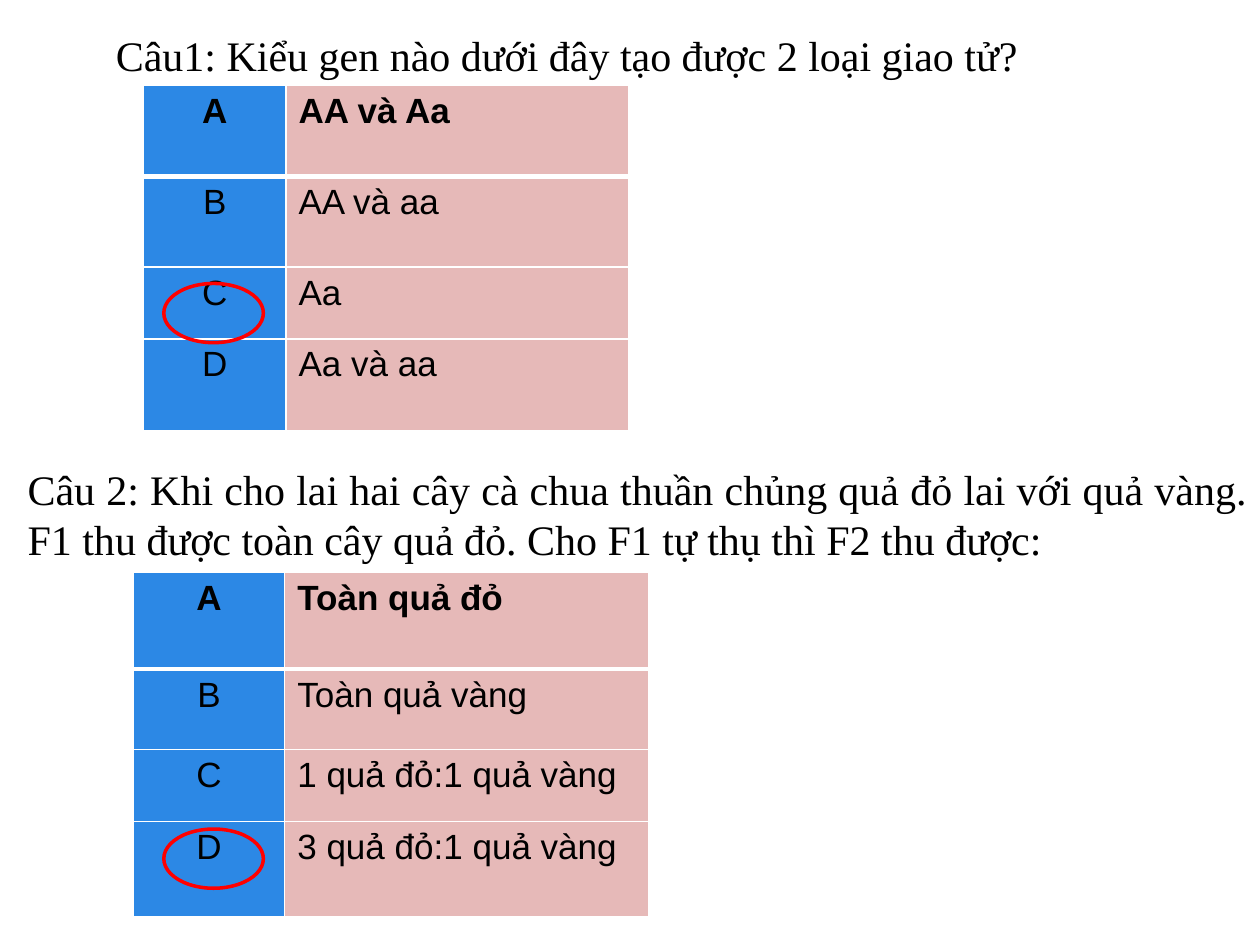
"""Build a quiz slide with two questions, their answer tables and circled answers."""
import pptx
import pptx.dml.color
import pptx.enum.shapes
import pptx.enum.text
import pptx.oxml.ns
import pptx.util
from lxml import etree

Inches = pptx.util.Inches
Pt = pptx.util.Pt
ALIGN = pptx.enum.text.PP_ALIGN
ANCHOR = pptx.enum.text.MSO_ANCHOR
COLORS = {"text": "000000", "letter": "2C88E5", "answer": "E6B9B8",
          "border": "FFFFFF", "circle": "FF0000"}


def rgb(name):
    return pptx.dml.color.RGBColor.from_string(COLORS[name])


def write(tf, text, size=20, font="Arial", bold=False, align=ALIGN.LEFT):
    p = tf.paragraphs[0]
    p.alignment = align
    r = p.add_run()
    r.text = text
    r.font.size = Pt(size)
    r.font.name = font
    r.font.bold = bold
    r.font.color.rgb = rgb("text")


def add_question(s, text, left, top, width, height, align, anchor):
    tf = s.shapes.add_textbox(Inches(left), Inches(top), Inches(width), Inches(height)).text_frame
    tf.word_wrap = True
    tf.vertical_anchor = anchor
    write(tf, text, size=24, font="Times New Roman", align=align)


def add_borders(cell, **widths):
    qn = pptx.oxml.ns.qn
    tc_pr = cell._tc.get_or_add_tcPr()
    for side in "LRTB":
        ln = etree.SubElement(tc_pr, qn(f"a:ln{side}"), w=str(Pt(widths.get(side, 1))))
        fill = etree.SubElement(ln, qn("a:solidFill"))
        etree.SubElement(fill, qn("a:srgbClr"), val=COLORS["border"])


def add_answers(s, answers, left, top, widths, heights):
    table = s.shapes.add_table(len(answers), 2, Inches(left), Inches(top),
                               Inches(sum(widths)), Inches(sum(heights))).table
    for column, width in zip(table.columns, widths):
        column.width = Inches(width)
    for i, (letter, answer) in enumerate(zip("ABCD", answers)):
        table.rows[i].height = Inches(heights[i])
        columns = [(letter, "letter", ALIGN.CENTER), (answer, "answer", ALIGN.LEFT)]
        for j, (text, color, align) in enumerate(columns):
            cell = table.cell(i, j)
            add_borders(cell, T=3 if i == 1 else 1, B=3 if i == 0 else 1)
            cell.fill.solid()
            cell.fill.fore_color.rgb = rgb(color)
            write(cell.text_frame, text, bold=i == 0, align=align)


def add_circle(s, top):
    sp = s.shapes.add_shape(pptx.enum.shapes.MSO_SHAPE.OVAL, Inches(1.3), Inches(top),
                            Inches(0.79), Inches(0.47))
    sp.shadow.inherit = False
    sp.fill.background()
    sp.line.color.rgb = rgb("circle")
    sp.line.width = Pt(2)


def main():
    prs = pptx.Presentation()
    prs.slide_width, prs.slide_height = Inches(10), Inches(7.5)
    s = prs.slides.add_slide(prs.slide_layouts[6])

    add_question(s, "Câu1: Kiểu gen nào dưới đây tạo được 2 loại giao tử?",
                 0, 0, 9, 0.87, ALIGN.CENTER, ANCHOR.MIDDLE)
    add_answers(s, ["AA và Aa", "AA và aa", "Aa", "Aa và aa"],
                1.14, 0.68, [1.13, 2.72], [0.72, 0.72, 0.57, 0.73])
    add_circle(s, 2.25)

    add_question(s, "Câu 2: Khi cho lai hai cây cà chua thuần chủng quả đỏ lai với quả vàng. "
                    "F1 thu được toàn cây quả đỏ. Cho F1 tự thụ thì F2 thu được:",
                 0.12, 3.63, 9.88, 0.88, ALIGN.JUSTIFY, ANCHOR.TOP)
    add_answers(s, ["Toàn quả đỏ", "Toàn quả vàng", "1 quả đỏ:1 quả vàng", "3 quả đỏ:1 quả vàng"],
                1.06, 4.54, [1.2, 2.89], [0.77, 0.64, 0.57, 0.76])
    add_circle(s, 6.58)

    prs.save("out.pptx")


if __name__ == "__main__":
    main()
